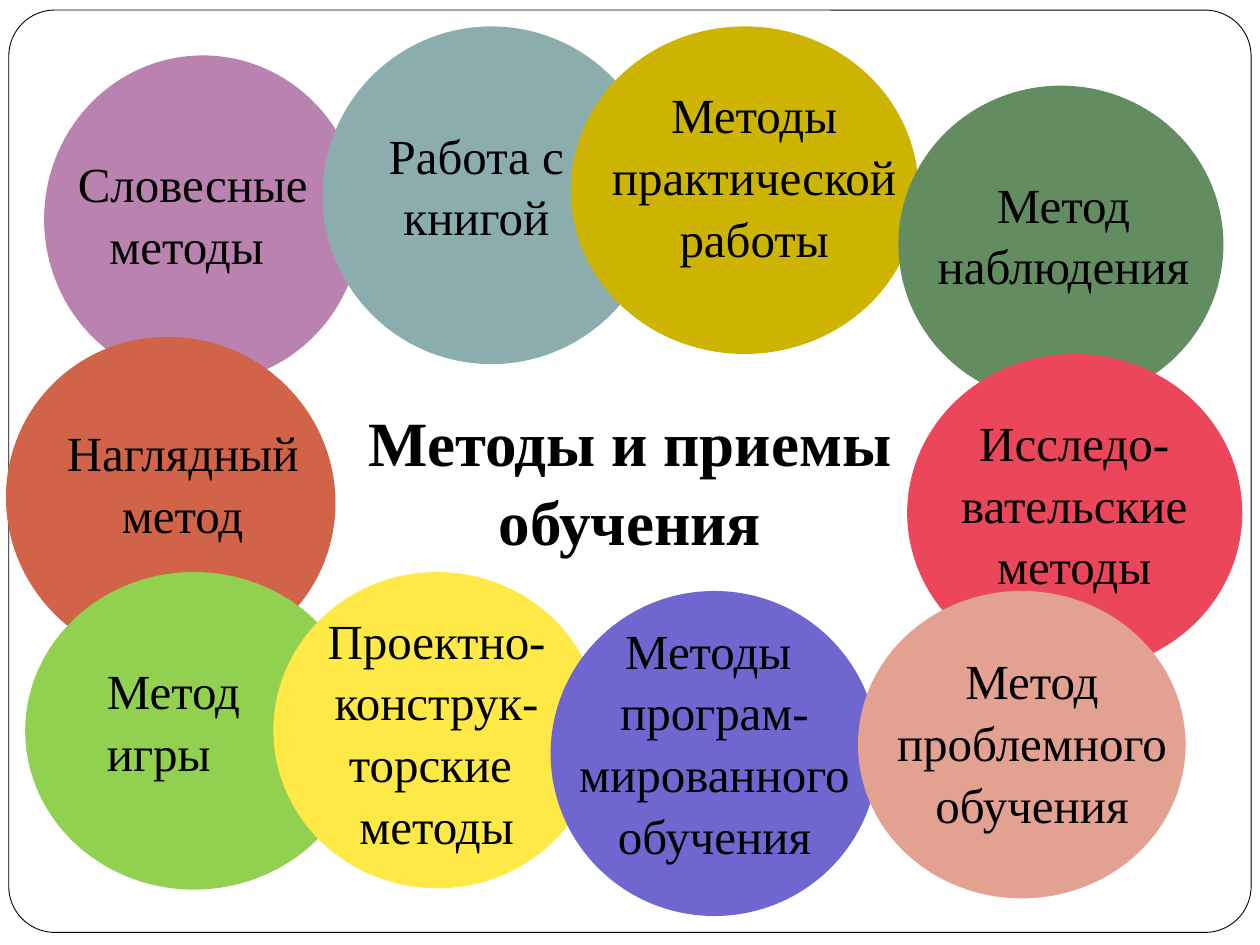
import pptx
import pptx.util
import pptx.dml.color
import pptx.enum.shapes
import pptx.enum.text

RGBColor = pptx.dml.color.RGBColor
MSO_SHAPE = pptx.enum.shapes.MSO_SHAPE
PP_ALIGN = pptx.enum.text.PP_ALIGN

BLACK = RGBColor(0x00, 0x00, 0x00)
WHITE = RGBColor(0xFF, 0xFF, 0xFF)
MAUVE = RGBColor(0xBA, 0x82, 0xAE)
TEAL = RGBColor(0x8C, 0xAD, 0xAE)
MUSTARD = RGBColor(0xCC, 0xB4, 0x00)
RUST = RGBColor(0xD1, 0x63, 0x49)
FOREST = RGBColor(0x64, 0x8C, 0x61)
CRIMSON = RGBColor(0xEC, 0x46, 0x5A)
LIME = RGBColor(0x92, 0xD0, 0x50)
YELLOW = RGBColor(0xFF, 0xE9, 0x47)
VIOLET = RGBColor(0x70, 0x66, 0xD0)
SALMON = RGBColor(0xE3, 0xA1, 0x92)

FONT = "Times New Roman"
COLUMNS, ROWS = 100, 75
WIDTH, HEIGHT = pptx.util.Inches(10), pptx.util.Inches(7.5)

CIRCLES = [
    ((3.5, 4.4, 25.2, 26), MAUVE, 0),
    ((25.6, 2.1, 26.8, 26.8), TEAL, 0),
    ((45.3, 2.1, 27.6, 26), MUSTARD, 0),
    ((0.4, 26.8, 26.3, 25.8), RUST, 32.5),
    ((71.3, 6.8, 25.8, 25.2), FOREST, 0),
    ((72, 28.1, 26.6, 25.2), CRIMSON, 0),
    ((2, 45.4, 26.8, 25.2), LIME, 0),
    ((21.7, 45.4, 26, 25.1), YELLOW, 0),
    ((43.7, 46.9, 26, 25.8), VIOLET, 0),
    ((68.1, 46.9, 26, 24.4), SALMON, 0),
]

LABELS = [
    ((4.3, 11.5, 22, 10.4), ["Словесные", "методы "], PP_ALIGN.CENTER),
    ((26.4, 9.2, 22.8, 13.5), ["Работа с книгой"], PP_ALIGN.CENTER),
    ((44.5, 6, 30.7, 21.2), ["Методы практической работы"], PP_ALIGN.CENTER),
    ((72, 13.1, 24.8, 13.5), ["Метод наблюдения"], PP_ALIGN.CENTER),
    ((70.5, 32, 29.5, 18.2), ["Исследо-вательские методы"], PP_ALIGN.CENTER),
    ((69.7, 50.9, 24.4, 18.2), ["Метод проблемного обучения"], PP_ALIGN.CENTER),
    ((42.9, 48.5, 27.6, 22.9), ["Методы ", "програм-мированного обучения"], PP_ALIGN.CENTER),
    ((19.3, 47.7, 30.7, 22.9), ["Проектно-конструк-торские ", "методы"], PP_ALIGN.CENTER),
    ((7.5, 51.7, 15, 13.5), ["Метод игры"], PP_ALIGN.LEFT),
    ((3.5, 32.8, 22, 13.5), ["Наглядный метод"], PP_ALIGN.CENTER),
]


def cells(box):
    """Turn a box in grid columns and rows into slide lengths."""
    x, y, w, h = box
    col, row = WIDTH / COLUMNS, HEIGHT / ROWS
    return round(x * col), round(y * row), round(w * col), round(h * row)


def add_frame(s, box):
    """Draw the rounded frame around the slide."""
    sp = s.shapes.add_shape(MSO_SHAPE.ROUNDED_RECTANGLE, *cells(box))
    sp.adjustments[0] = 0.05
    sp.shadow.inherit = False
    sp.fill.solid()
    sp.fill.fore_color.rgb = WHITE
    sp.line.color.rgb = BLACK
    sp.line.width = pptx.util.Pt(0.5)


def add_circle(s, box, color, rotation):
    """Draw one coloured circle of the ring."""
    sp = s.shapes.add_shape(MSO_SHAPE.OVAL, *cells(box))
    sp.rotation = rotation
    sp.shadow.inherit = False
    sp.fill.solid()
    sp.fill.fore_color.rgb = color
    sp.line.fill.background()


def add_label(s, box, lines, align, size=28, bold=False):
    """Write wrapped paragraphs into a box."""
    tf = s.shapes.add_textbox(*cells(box)).text_frame
    tf.word_wrap = True
    for i, line in enumerate(lines):
        p = tf.add_paragraph() if i else tf.paragraphs[0]
        p.alignment = align
        p.line_spacing = 1.05
        r = p.add_run()
        r.text = line
        r.font.name = FONT
        r.font.size = pptx.util.Pt(size)
        r.font.bold = bold
        r.font.color.rgb = BLACK


def main():
    """Build the slide and save it."""
    prs = pptx.Presentation()
    prs.slide_width, prs.slide_height = WIDTH, HEIGHT
    s = prs.slides.add_slide(prs.slide_layouts[6])
    add_frame(s, (0.7, 0.8, 98.6, 73.2))
    for circle in CIRCLES:
        add_circle(s, *circle)
    for label in LABELS:
        add_label(s, *label)
    add_label(s, (26.4, 31.2, 47.2, 13.1), ["Методы и приемы обучения"],
              PP_ALIGN.CENTER, size=36, bold=True)
    prs.save("out.pptx")


if __name__ == "__main__":
    main()
